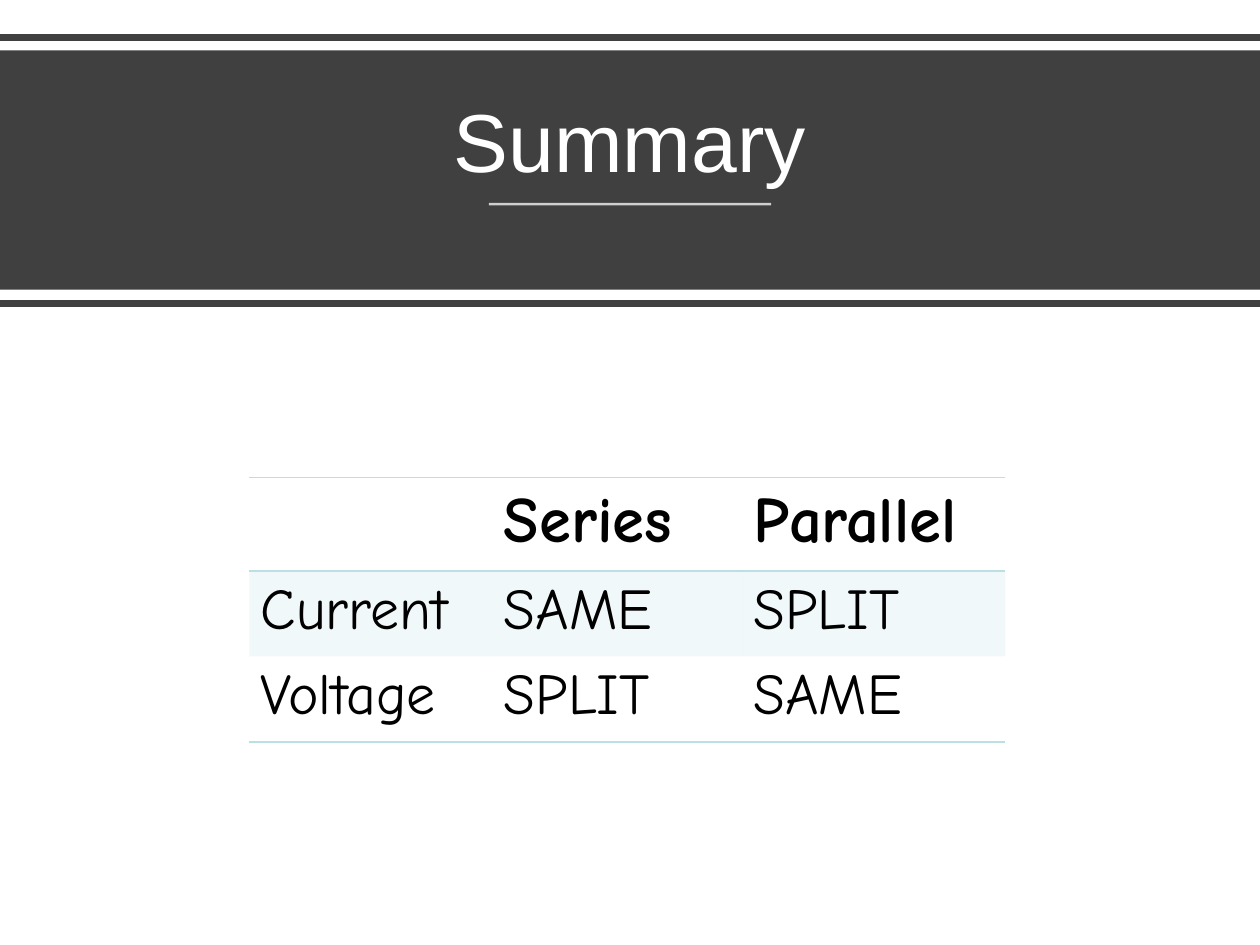
import pptx
import pptx.util
import pptx.dml.color
import pptx.enum.shapes
import pptx.enum.text
import pptx.oxml
import pptx.oxml.ns
from pptx.util import Inches

INK = {"dark": "404040", "white": "FFFFFF", "black": "000000", "teal": "BBE0E3"}
ROWS = [("", "Series", "Parallel"),
        ("Current", "SAME", "SPLIT"),
        ("Voltage", "SPLIT", "SAME")]


class Deck:
    """Holds the style and the current slide, and draws each kind of element."""

    def __init__(self, slide, ink):
        self.slide = slide
        self.ink = ink

    def tint(self, name):
        return pptx.dml.color.RGBColor.from_string(self.ink[name])

    def node(self, tag, **attrs):
        item = pptx.oxml.parse_xml(f"<a:{tag} {pptx.oxml.ns.nsdecls('a')}/>")
        for key, value in attrs.items():
            item.set(key, str(value))
        return item

    def fade(self, root, share):
        color = next(root.iter(pptx.oxml.ns.qn("a:srgbClr")))
        color.append(self.node("alpha", val=share * 1000))

    def rule(self, left, right, top, name, width, share=100):
        line = self.slide.shapes.add_connector(
            pptx.enum.shapes.MSO_CONNECTOR.STRAIGHT,
            Inches(left), Inches(top), Inches(right), Inches(top))
        line.line.color.rgb = self.tint(name)
        line.line.width = pptx.util.Pt(width)
        props = line.element.spPr
        props.append(self.node("effectLst"))
        if share < 100:
            self.fade(props, share)

    def band(self, left, top, width, height, name):
        box = self.slide.shapes.add_shape(
            pptx.enum.shapes.MSO_SHAPE.RECTANGLE,
            Inches(left), Inches(top), Inches(width), Inches(height))
        box.shadow.inherit = False
        box.fill.solid()
        box.fill.fore_color.rgb = self.tint(name)
        box.line.fill.background()

    def label(self, para, text, size, font, name, bold=False):
        run = para.add_run()
        run.text = text
        run.font.size = pptx.util.Pt(size)
        run.font.name = font
        run.font.bold = bold
        run.font.color.rgb = self.tint(name)

    def title(self, left, top, width, height, text):
        box = self.slide.shapes.add_textbox(
            Inches(left), Inches(top), Inches(width), Inches(height))
        frame = box.text_frame
        frame.word_wrap = True
        frame.vertical_anchor = pptx.enum.text.MSO_ANCHOR.BOTTOM
        para = frame.paragraphs[0]
        para.alignment = pptx.enum.text.PP_ALIGN.CENTER
        para.line_spacing = 0.9
        self.label(para, text, 47, "Arial", "white")

    def edges(self, cell, sides):
        props = cell._tc.get_or_add_tcPr()
        for spot, side in enumerate("LRTB"):
            line = self.node(f"ln{side}", w=pptx.util.Pt(1))
            if side in sides:
                fill = self.node("solidFill")
                fill.append(self.node("srgbClr", val=self.ink["teal"]))
            else:
                fill = self.node("noFill")
            line.append(fill)
            props.insert(spot, line)

    def table(self, left, top, widths, heights, rows):
        grid = self.slide.shapes.add_table(
            len(rows), len(widths), Inches(left), Inches(top),
            Inches(sum(widths)), Inches(sum(heights))).table
        grid.first_row = grid.horz_banding = False
        for col, width in zip(grid.columns, widths):
            col.width = Inches(width)
        for r, (row, height) in enumerate(zip(rows, heights)):
            grid.rows[r].height = Inches(height)
            for c, text in enumerate(row):
                cell = grid.cell(r, c)
                cell.margin_left = cell.margin_right = Inches(0.09)
                cell.margin_top = cell.margin_bottom = Inches(0.05)
                if r == 1:
                    cell.fill.solid()
                    cell.fill.fore_color.rgb = self.tint("teal")
                    self.fade(cell._tc.tcPr, 20)
                else:
                    cell.fill.background()
                self.edges(cell, ("TB", "T", "B")[r])
                if text:
                    self.label(cell.text_frame.paragraphs[0], text,
                               33 if r else 37, "Comic Neue", "black", r == 0)


def main():
    show = pptx.Presentation()
    show.slide_width, show.slide_height = Inches(10), Inches(7.5)
    deck = Deck(show.slides.add_slide(show.slide_layouts[6]), INK)
    deck.rule(0, 10, 0.3, "dark", 4)
    deck.band(0, 0.4, 10, 1.9, "dark")
    deck.title(0.43, 0.54, 9.14, 1.02, "Summary")
    deck.rule(3.88, 6.12, 1.62, "white", 1.5, 75)
    deck.rule(0, 10, 2.41, "dark", 4)
    deck.table(1.98, 3.79, (1.93, 1.98, 2.09), (0.74, 0.68, 0.68), ROWS)
    show.save("out.pptx")


if __name__ == "__main__":
    main()
